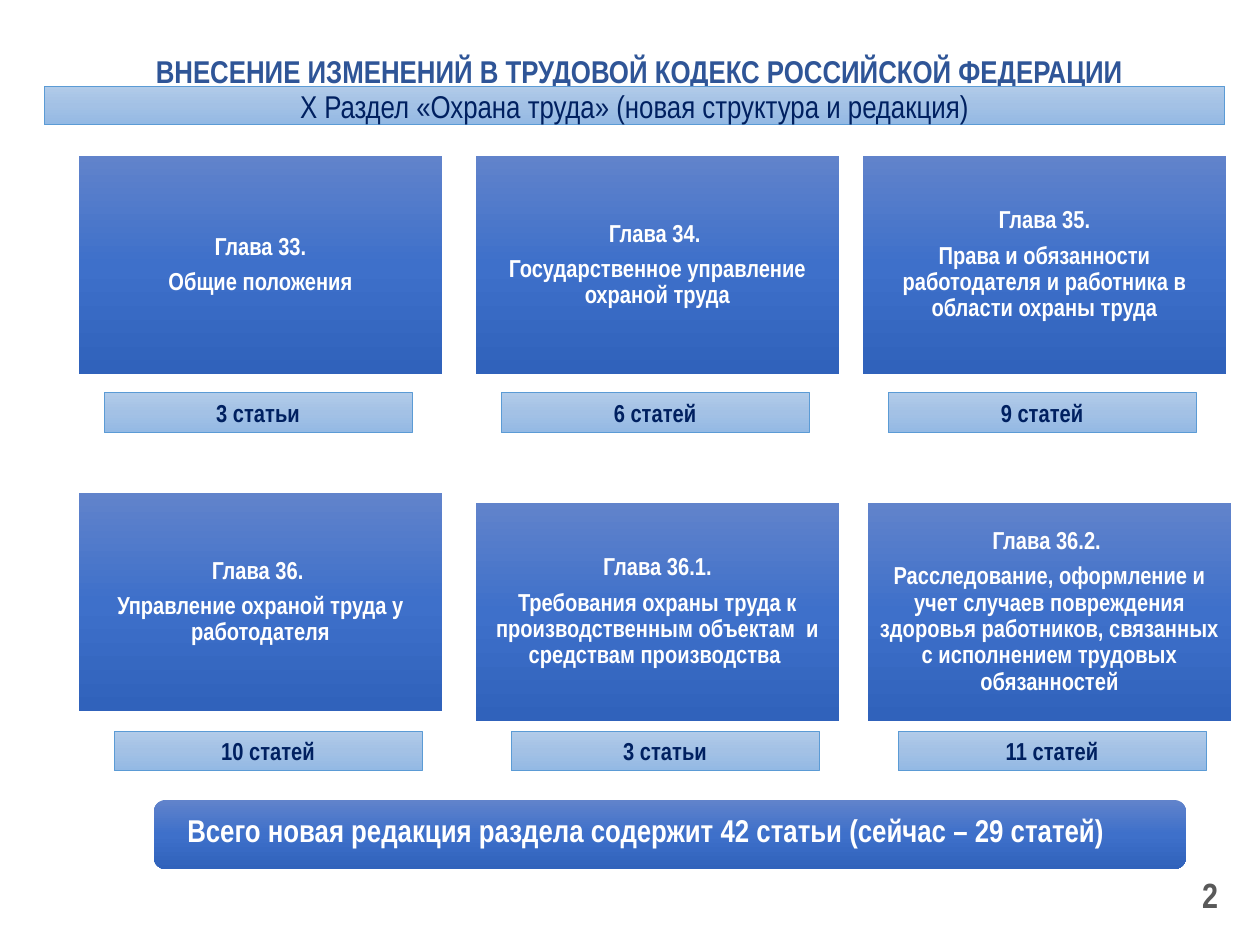
"""Build the slide on the new structure of the labour protection section."""
from copy import deepcopy
from dataclasses import dataclass

from pptx import Presentation
from pptx.dml.color import RGBColor
from pptx.enum.shapes import MSO_SHAPE as Shape
from pptx.enum.text import MSO_ANCHOR as Anchor, MSO_AUTO_SIZE as AutoSize, PP_ALIGN as Align
from pptx.oxml.ns import qn
from pptx.util import Inches, Pt

TITLE = "ВНЕСЕНИЕ ИЗМЕНЕНИЙ В ТРУДОВОЙ КОДЕКС РОССИЙСКОЙ ФЕДЕРАЦИИ"
SECTION = "Х Раздел «Охрана труда» (новая структура и редакция)"
TOTAL = "Всего новая редакция раздела содержит 42 статьи (сейчас – 29 статей)"
PAGE = "2"
CHAPTER_ROWS = [
    [
        ("Глава 33.", "Общие положения", "3 статьи", (0, 0)),
        ("Глава 34. ", "Государственное управление охраной труда", "6 статей", (0, 0)),
        ("Глава 35.", "Права и обязанности работодателя и работника в области охраны труда",
         "9 статей", (0, 0)),
    ],
    [
        ("Глава 36. ", "Управление охраной труда у работодателя", "10 статей", (0, -10)),
        ("Глава 36.1.", "Требования охраны труда к производственным объектам  и средствам производства ",
         "3 статьи", (0, 0)),
        ("Глава 36.2. ", "Расследование, оформление и учет случаев повреждения здоровья работников, "
         "связанных с исполнением трудовых обязанностей", "11 статей", (5, 0)),
    ],
]


@dataclass(frozen=True)
class Theme:
    font: str = "Arial Narrow"
    title: str = "2F5597"
    navy: str = "002060"
    white: str = "FFFFFF"
    grey: str = "595959"
    border: str = "5B9BD5"
    dark: tuple = ("6183CB", "3E70CA", "3062BB")
    light: tuple = ("B1CBE9", "A3C1E5", "93B9E4")
    small: int = 14
    large: int = 18
    number: int = 20


THEME = Theme()
SCALE = Inches(1) / 126
COLUMNS = (79, 476, 863)
ROWS = ((156, 393, 25), (503, 731, 35))
CARD_SIZE = (363, 218)
COUNT_SIZE = (308, 40)
DEFAULT_INSETS = (13, 6, 13, 6)
CARD_INSETS = (8, 8, 8, 8)
TOTAL_INSETS = (30, 0, 30, 4)


def px(value):
    return round(value * SCALE)


def write(shape, lines, size, color, bold=True, align=Align.CENTER, anchor=Anchor.MIDDLE,
          insets=DEFAULT_INSETS, line_spacing=1.0, space_after=0):
    frame = shape.text_frame
    frame.text = "\n".join(lines)
    frame.word_wrap = True
    frame.auto_size = AutoSize.NONE
    frame.vertical_anchor = anchor
    frame.margin_left, frame.margin_top, frame.margin_right, frame.margin_bottom = map(px, insets)
    for paragraph in frame.paragraphs:
        paragraph.alignment = align
        paragraph.line_spacing = line_spacing
        paragraph.space_after = Pt(space_after)
        font = paragraph.font
        font.name, font.size, font.bold = THEME.font, Pt(size), bold
        font.color.rgb = RGBColor.from_string(color)


def add_panel(slide, box, colors, border=None, preset=Shape.RECTANGLE):
    shape = slide.shapes.add_shape(preset, *map(px, box))
    shape.shadow.inherit = False
    fill = shape.fill
    fill.gradient()
    fill.gradient_angle = 270
    first_stop = shape._element.spPr.find(qn("a:gradFill")).find(qn("a:gsLst"))[0]
    first_stop.addnext(deepcopy(first_stop))
    for stop, position, color in zip(fill.gradient_stops, (0, 0.5, 1), colors):
        stop.position = position
        stop.color.rgb = RGBColor.from_string(color)
    if border:
        shape.line.color.rgb = RGBColor.from_string(border)
        shape.line.width = Pt(0.5)
    else:
        shape.line.fill.background()
    return shape


def add_chapters(slide):
    for (card_top, count_top, indent), chapters in zip(ROWS, CHAPTER_ROWS):
        for left, (chapter, subject, count, (shift_x, shift_y)) in zip(COLUMNS, chapters):
            card = add_panel(slide, (left + shift_x, card_top + shift_y, *CARD_SIZE), THEME.dark)
            write(card, [chapter, subject], THEME.small, THEME.white, insets=CARD_INSETS,
                  line_spacing=0.9, space_after=4.9)
            label = add_panel(slide, (left + indent, count_top, *COUNT_SIZE),
                              THEME.light, THEME.border)
            write(label, [count], THEME.small, THEME.navy)


def main():
    presentation = Presentation()
    presentation.slide_width, presentation.slide_height = px(1260), px(945)
    slide = presentation.slides.add_slide(presentation.slide_layouts[5])

    title = slide.shapes.title
    title.left, title.top, title.width, title.height = map(px, (104, 16, 1071, 80))
    write(title, [TITLE], THEME.large, THEME.title, anchor=Anchor.BOTTOM, line_spacing=0.9)

    section = add_panel(slide, (44, 86, 1181, 39), THEME.light, THEME.border)
    write(section, [SECTION], THEME.large, THEME.navy, bold=False)

    add_chapters(slide)

    total = add_panel(slide, (154, 800, 1032, 69), THEME.dark, preset=Shape.ROUNDED_RECTANGLE)
    write(total, [TOTAL], THEME.large, THEME.white, align=Align.LEFT,
          insets=TOTAL_INSETS, line_spacing=0.9)

    number = slide.shapes.add_textbox(*map(px, (937, 870, 294, 50)))
    write(number, [PAGE], THEME.number, THEME.grey, align=Align.RIGHT)

    presentation.save("out.pptx")


if __name__ == "__main__":
    main()
